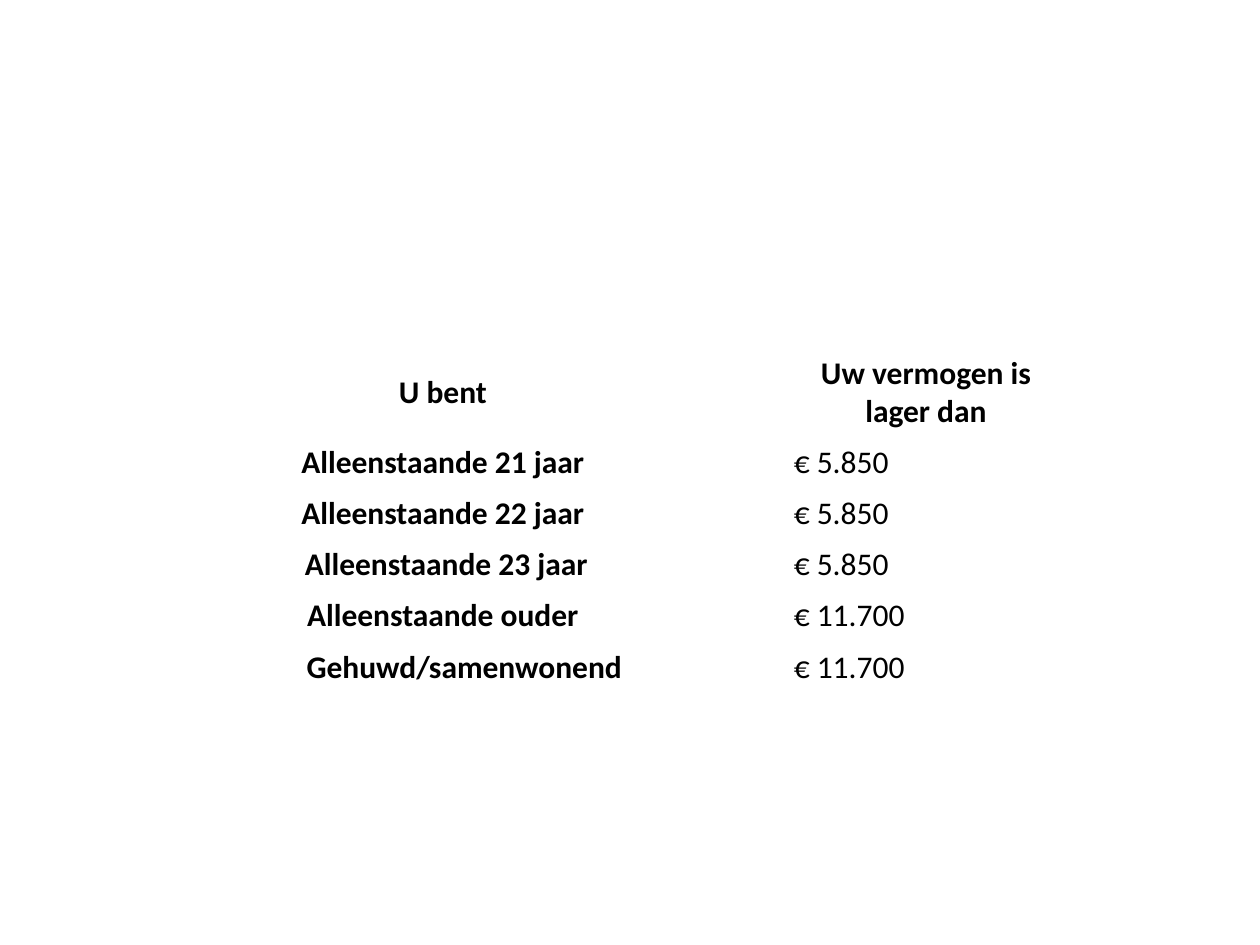
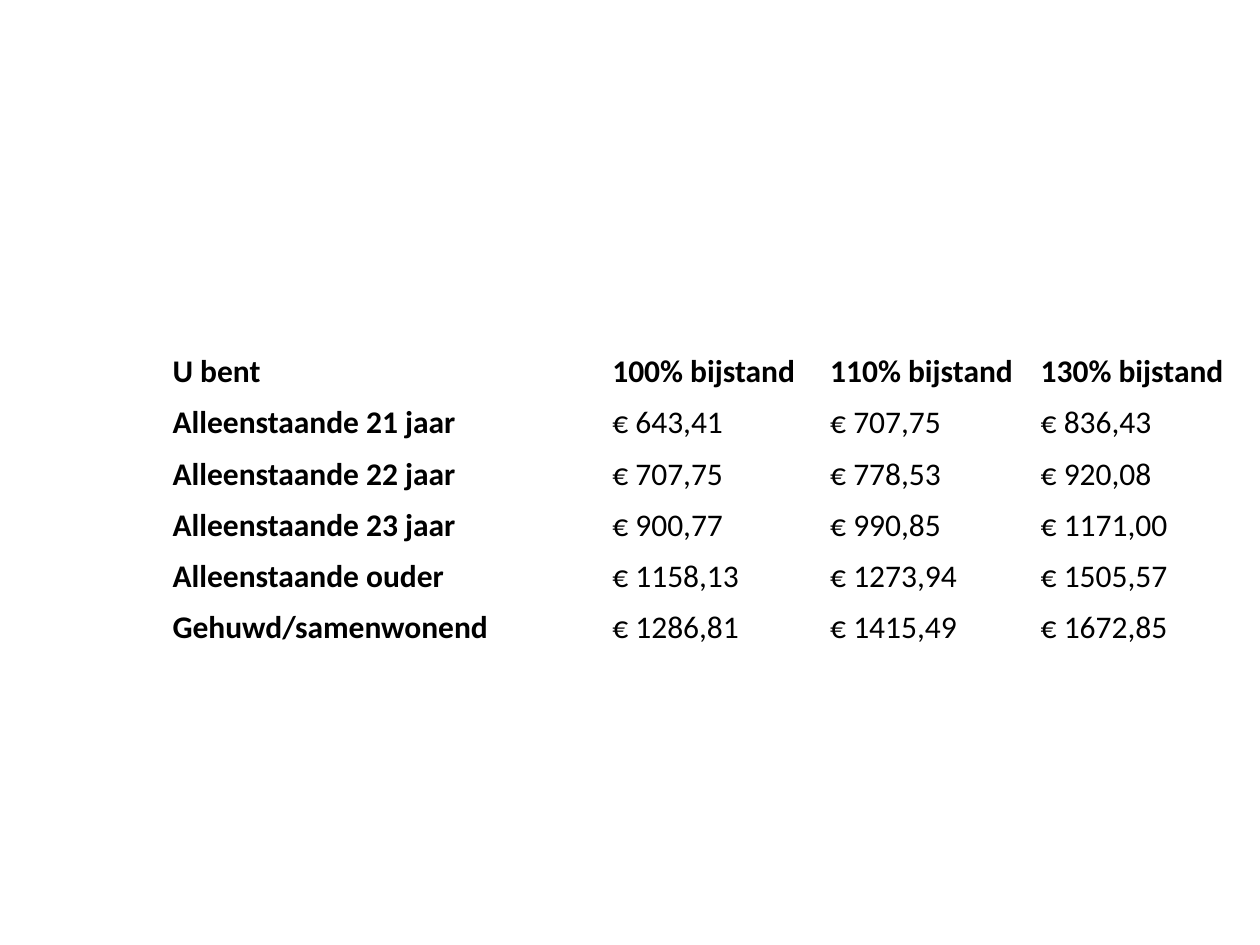
from lxml import etree
from pptx import Presentation
from pptx.dml import color
from pptx.enum import text as t
from pptx.oxml import ns
from pptx.util import Pt

COLORS = {"text": "000000"}
FONT = "Calibri"
FONT_SIZE = 18
ROW_HEIGHT = 28.8
TALL_HEADER = 50.4

presentation = Presentation()
presentation.slide_width, presentation.slide_height = Pt(720), Pt(540)


def write(cell, content, bold=False, align=t.PP_ALIGN.LEFT, indent=0, tab=0):
    """Fill a cell with one paragraph; indent and tab are in points."""
    paragraph = cell.text_frame.paragraphs[0]
    paragraph.alignment = align
    properties = paragraph._p.get_or_add_pPr()
    if indent:
        properties.set("marL", str(Pt(indent)))
        properties.set("indent", "0")
    if tab:
        tabs = etree.SubElement(properties, ns.qn("a:tabLst"))
        etree.SubElement(tabs, ns.qn("a:tab"), pos=str(Pt(tab)), algn="l")
    run = paragraph.add_run()
    run.text = content
    run.font.name, run.font.size, run.font.bold = FONT, Pt(FONT_SIZE), bold
    run.font.color.rgb = color.RGBColor.from_string(COLORS["text"])


def add_plain_table(left, top, widths, heights):
    """Add a slide holding a table without fills or banding."""
    slide = presentation.slides.add_slide(presentation.slide_layouts[6])
    table = slide.shapes.add_table(
        len(heights), len(widths), Pt(left), Pt(top), Pt(sum(widths)), Pt(sum(heights))
    ).table
    table.first_row = table.horz_banding = False
    for column, width in zip(table.columns, widths):
        column.width = Pt(width)
    for row, height in zip(table.rows, heights):
        row.height = Pt(height)
    for cell in table.iter_cells():
        cell.fill.background()
        cell.vertical_anchor = t.MSO_ANCHOR.MIDDLE
    return table


households = [
    "Alleenstaande 21 jaar",
    "Alleenstaande 22 jaar",
    "Alleenstaande 23 jaar",
    "Alleenstaande ouder",
    "Gehuwd/samenwonend",
]

# Slide 1: wealth limit per household, with an empty spacer column
limits = ["€ 5.850"] * 3 + ["€ 11.700"] * 2
label_indents = [0, 0, 4, 0, 24.4]
table = add_plain_table(108, 198.7, [290.2, 48.2, 165.6], [TALL_HEADER] + [ROW_HEIGHT] * 5)
write(table.cell(0, 0), "U bent", bold=True, align=t.PP_ALIGN.CENTER)
write(table.cell(0, 2), "Uw vermogen is lager dan", bold=True, align=t.PP_ALIGN.CENTER)
for row, (household, limit, indent) in enumerate(zip(households, limits, label_indents), 1):
    write(table.cell(row, 0), household, bold=True, align=t.PP_ALIGN.CENTER, indent=indent)
    write(table.cell(row, 2), limit)

# Slide 2: income limits, the middle column holding two tabbed amounts
incomes = [
    ("100% bijstand", "110% bijstand", "130% bijstand"),
    ("€ 643,41", "€ 707,75", "€ 836,43"),
    ("€ 707,75", "€ 778,53", "€ 920,08"),
    ("€ 900,77", "€ 990,85", "€ 1171,00"),
    ("€ 1158,13", "€ 1273,94", "€ 1505,57"),
    ("€ 1286,81", "€ 1415,49", "€ 1672,85"),
]
table = add_plain_table(-74.9, 198, [417.6, 244.8, 208.1], [ROW_HEIGHT] * 6)
for row, (label, amounts) in enumerate(zip(["U bent"] + households, incomes)):
    is_header = row == 0
    write(table.cell(row, 0), label, bold=True, indent=166.3)
    write(table.cell(row, 1), "\t".join(amounts[:2]), bold=is_header, tab=124.5)
    write(table.cell(row, 2), amounts[2], bold=is_header)

presentation.save("out.pptx")
